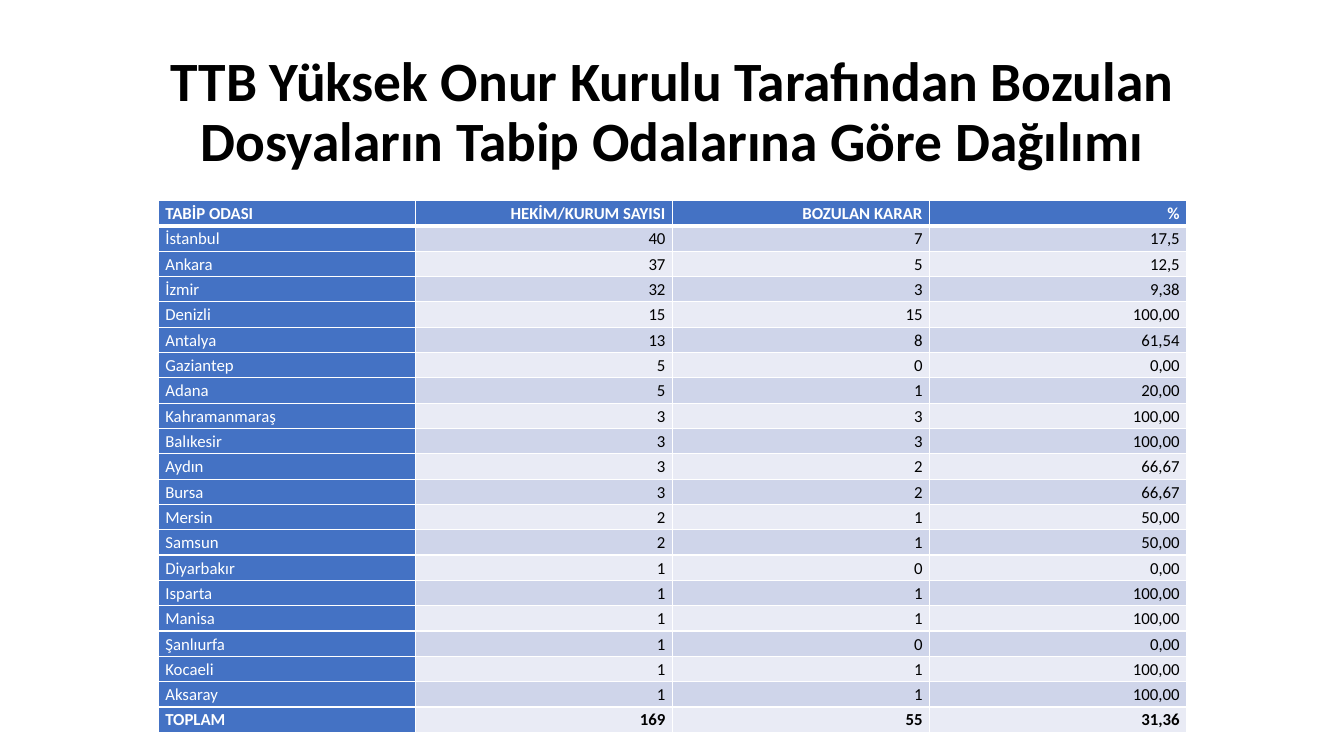
import dataclasses

import pptx
import pptx.dml.color
import pptx.enum.text
import pptx.oxml
import pptx.oxml.ns
import pptx.util

Inches = pptx.util.Inches
Pt = pptx.util.Pt
ALIGN = pptx.enum.text.PP_ALIGN
ANCHOR = pptx.enum.text.MSO_ANCHOR


@dataclasses.dataclass(frozen=True)
class Theme:
    font: str = "Calibri"
    title_size: float = 39.6
    table_size: float = 12
    text: str = "000000"
    light: str = "FFFFFF"
    accent: str = "4472C4"
    bands: tuple = ("E9EBF5", "CFD5EA")
    border: float = 1
    header_border: float = 3


THEME = Theme()

TITLE = "TTB Yüksek Onur Kurulu Tarafından Bozulan Dosyaların Tabip Odalarına Göre Dağılımı"

ROWS = [
    ("TABİP ODASI", "HEKİM/KURUM SAYISI", "BOZULAN KARAR", "%"),
    ("İstanbul", "40", "7", "17,5"),
    ("Ankara", "37", "5", "12,5"),
    ("İzmir", "32", "3", "9,38"),
    ("Denizli", "15", "15", "100,00"),
    ("Antalya", "13", "8", "61,54"),
    ("Gaziantep", "5", "0", "0,00"),
    ("Adana", "5", "1", "20,00"),
    ("Kahramanmaraş", "3", "3", "100,00"),
    ("Balıkesir", "3", "3", "100,00"),
    ("Aydın", "3", "2", "66,67"),
    ("Bursa", "3", "2", "66,67"),
    ("Mersin", "2", "1", "50,00"),
    ("Samsun", "2", "1", "50,00"),
    ("Diyarbakır", "1", "0", "0,00"),
    ("Isparta", "1", "1", "100,00"),
    ("Manisa", "1", "1", "100,00"),
    ("Şanlıurfa", "1", "0", "0,00"),
    ("Kocaeli", "1", "1", "100,00"),
    ("Aksaray", "1", "1", "100,00"),
    ("TOPLAM", "169", "55", "31,36"),
]


def rgb(color):
    return pptx.dml.color.RGBColor.from_string(color)


def style_paragraph(p, size, color, bold, align, spacing):
    p.alignment = align
    p.line_spacing = spacing
    for r in p.runs:
        r.font.name = THEME.font
        r.font.size = Pt(size)
        r.font.bold = bold
        r.font.color.rgb = rgb(color)


def set_borders(cell, top, bottom):
    tc_pr = cell._tc.get_or_add_tcPr()
    widths = {"lnL": THEME.border, "lnR": THEME.border, "lnT": top, "lnB": bottom}
    for side, width in widths.items():
        tc_pr.append(pptx.oxml.parse_xml(
            f'<a:{side} {pptx.oxml.ns.nsdecls("a")} w="{Pt(width)}">'
            f'<a:solidFill><a:srgbClr val="{THEME.light}"/></a:solidFill></a:{side}>'
        ))


def add_title(s, left, top, width, height):
    sp = s.shapes.add_textbox(left, top, width, height)
    tf = sp.text_frame
    tf.word_wrap = True
    tf.vertical_anchor = ANCHOR.MIDDLE
    tf.text = TITLE
    style_paragraph(tf.paragraphs[0], THEME.title_size, THEME.text, True, ALIGN.CENTER, 0.9)


def fill_cell(cell, text, row, col):
    is_header = row == 0
    on_accent = is_header or col == 0
    cell.margin_left = cell.margin_right = Inches(0.07)
    cell.margin_top = cell.margin_bottom = 0
    set_borders(
        cell,
        THEME.header_border if row == 1 else THEME.border,
        THEME.header_border if is_header else THEME.border,
    )
    cell.fill.solid()
    cell.fill.fore_color.rgb = rgb(THEME.accent if on_accent else THEME.bands[row % 2])
    cell.text_frame.text = text
    p = cell.text_frame.paragraphs[0]
    p.space_after = Pt(10)
    style_paragraph(
        p,
        THEME.table_size,
        THEME.light if on_accent else THEME.text,
        row in (0, len(ROWS) - 1),
        ALIGN.RIGHT if col else ALIGN.LEFT,
        1.15,
    )


def add_chamber_table(s, left, top, width, height):
    table = s.shapes.add_table(len(ROWS), len(ROWS[0]), left, top, width, height).table
    for column in table.columns:
        column.width = width // len(ROWS[0])
    for table_row in table.rows:
        table_row.height = height // len(ROWS)
    for row, values in enumerate(ROWS):
        for col, text in enumerate(values):
            fill_cell(table.cell(row, col), text, row, col)


def main():
    prs = pptx.Presentation()
    prs.slide_width = Inches(13.33)
    prs.slide_height = Inches(7.5)
    s = prs.slides.add_slide(prs.slide_layouts[6])
    add_title(s, Inches(0.92), Inches(0.4), Inches(11.5), Inches(1.45))
    add_chamber_table(s, Inches(1.57), Inches(1.99), Inches(10.2), Inches(5.28))
    prs.save("out.pptx")


if __name__ == "__main__":
    main()
